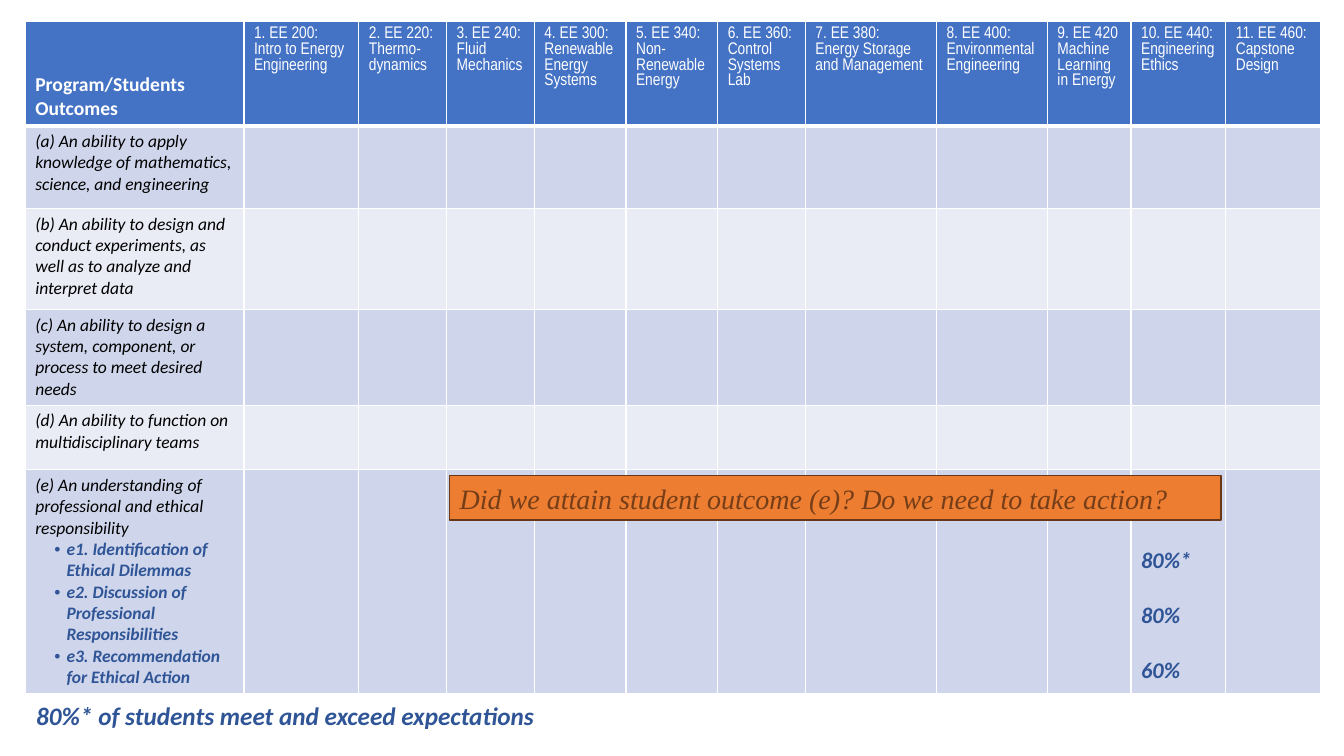
import pptx
import pptx.dml.color
import pptx.enum.shapes
import pptx.enum.text
import pptx.oxml
import pptx.oxml.ns
import pptx.util

Inches = pptx.util.Inches
Pt = pptx.util.Pt
ANCHOR = pptx.enum.text.MSO_ANCHOR

WHITE, BLACK, BLUE, NAVY = "FFFFFF", "000000", "4472C4", "2F5597"
BANDS = ("CFD5EA", "E9EBF5")
COL_WIDTHS = (2.17, 1.14, 0.87, 0.87, 0.91, 0.91, 0.87, 1.3, 1.1, 0.83, 0.94, 0.94)
ROW_HEIGHTS = (1.04, 0.82, 1, 0.95, 0.64, 2.22)
ETHICS_COL = 10
COURSES = (
    "1. EE 200: Intro to Energy Engineering",
    "2. EE 220: Thermo-dynamics",
    "3. EE 240: Fluid Mechanics",
    "4. EE 300: Renewable Energy Systems",
    "5. EE 340: Non-Renewable Energy",
    "6. EE 360: Control Systems Lab",
    "7. EE 380: Energy Storage and Management",
    "8. EE 400: Environmental Engineering",
    "9. EE 420 Machine Learning in Energy",
    "10. EE 440: Engineering Ethics",
    "11. EE 460: Capstone Design",
)
OUTCOMES = (
    "(a) An ability to apply knowledge of mathematics, science, and engineering",
    "(b) An ability to design and conduct experiments, as well as to analyze and interpret data",
    "(c) An ability to design a system, component, or process to meet desired needs",
    "(d) An ability to function on multidisciplinary teams",
    "(e) An understanding of professional and ethical responsibility",
)
INDICATORS = (
    "e1. Identification of Ethical Dilemmas",
    "e2. Discussion of Professional Responsibilities",
    "e3. Recommendation for Ethical Action",
)
RESULTS = ("80%*", "80%", "60%")


def rgb(color):
    """Turn a hex string into a colour."""
    return pptx.dml.color.RGBColor.from_string(color)


def add_run(p, text, size, color, font="Calibri", bold=False, italic=False):
    """Add one formatted run to a paragraph."""
    r = p.add_run()
    r.text = text
    r.font.size = Pt(size)
    r.font.name = font
    r.font.bold = bold
    r.font.italic = italic
    r.font.color.rgb = rgb(color)


def xml(text):
    """Parse a DrawingML fragment."""
    return pptx.oxml.parse_xml(text.replace(">", f' {pptx.oxml.ns.nsdecls("a")}>', 1))


def style_cell(cell, fill, bottom_width=1):
    """Fill a cell and give it white borders."""
    cell.fill.solid()
    cell.fill.fore_color.rgb = rgb(fill)
    tc_pr = cell._tc.get_or_add_tcPr()
    for i, side in enumerate("LRTB"):
        width = Pt(bottom_width if side == "B" else 1)
        tc_pr.insert(i, xml(
            f'<a:ln{side} w="{width}"><a:solidFill><a:srgbClr val="{WHITE}"/>'
            f'</a:solidFill></a:ln{side}>'))


def add_bullet(p):
    """Give a paragraph a hanging bullet."""
    p_pr = p._p.get_or_add_pPr()
    p_pr.set("marL", str(Inches(0.31)))
    p_pr.set("indent", str(Inches(-0.12)))
    p_pr.append(xml('<a:buFont typeface="Arial"></a:buFont>'))
    p_pr.append(xml('<a:buChar char="•"></a:buChar>'))


def fill_header(table):
    """Write the heading and the course names in the first row."""
    heading = table.cell(0, 0)
    heading.vertical_anchor = ANCHOR.BOTTOM
    add_run(heading.text_frame.paragraphs[0], "Program/Students Outcomes", 14, WHITE, bold=True)
    for col, course in enumerate(COURSES, 1):
        p = table.cell(0, col).text_frame.paragraphs[0]
        add_run(p, course, 12, WHITE, "Arial Narrow")


def fill_outcomes(table):
    """Write the outcomes, the indicators of the last one and their results."""
    for row, outcome in enumerate(OUTCOMES, 1):
        tf = table.cell(row, 0).text_frame
        add_run(tf.paragraphs[0], outcome, 12.5, BLACK, italic=True)
    for indicator in INDICATORS:
        p = tf.add_paragraph()
        add_bullet(p)
        add_run(p, indicator, 12.5, NAVY, bold=True, italic=True)

    cell = table.cell(len(OUTCOMES), ETHICS_COL)
    cell.vertical_anchor = ANCHOR.BOTTOM
    cell.margin_bottom = Inches(0.09)
    tf = cell.text_frame
    for i, result in enumerate(RESULTS):
        p = tf.add_paragraph() if i else tf.paragraphs[0]
        if i:
            p.space_before = Pt(19.5)
        add_run(p, result, 16, NAVY, bold=True, italic=True)


def add_matrix(s, left, top):
    """Add the table of outcomes against courses."""
    frame = s.shapes.add_table(
        len(ROW_HEIGHTS), len(COL_WIDTHS), Inches(left), Inches(top),
        Inches(sum(COL_WIDTHS)), Inches(sum(ROW_HEIGHTS)))
    table = frame.table
    for column, width in zip(table.columns, COL_WIDTHS):
        column.width = Inches(width)
    for i, (row, height) in enumerate(zip(table.rows, ROW_HEIGHTS)):
        row.height = Inches(height)
        for cell in row.cells:
            if i:
                style_cell(cell, BANDS[(i - 1) % 2])
            else:
                style_cell(cell, BLUE, 3)
    fill_header(table)
    fill_outcomes(table)


def add_footnote(s, left, top, width, height):
    """Add the note on the target below the table."""
    sp = s.shapes.add_textbox(Inches(left), Inches(top), Inches(width), Inches(height))
    tf = sp.text_frame
    tf.word_wrap = True
    add_run(tf.paragraphs[0], "80%* of students meet and exceed expectations",
            18, NAVY, bold=True, italic=True)


def add_question(s, left, top, width, height):
    """Add the orange question banner over the table."""
    sp = s.shapes.add_shape(
        pptx.enum.shapes.MSO_SHAPE.RECTANGLE,
        Inches(left), Inches(top), Inches(width), Inches(height))
    sp.shadow.inherit = False
    sp.fill.solid()
    sp.fill.fore_color.rgb = rgb("ED7D31")
    sp.line.color.rgb = rgb("683715")
    sp.line.width = Pt(1)
    tf = sp.text_frame
    tf.word_wrap = True
    tf.vertical_anchor = ANCHOR.MIDDLE
    p = tf.paragraphs[0]
    p.alignment = pptx.enum.text.PP_ALIGN.LEFT
    add_run(p, "Did we attain student outcome (e)? Do we need to take action?",
            20, "763E18", "Times New Roman", italic=True)


def main():
    """Build and save the slide."""
    prs = pptx.Presentation()
    prs.slide_width, prs.slide_height = Inches(13.33), Inches(7.5)
    s = prs.slides.add_slide(prs.slide_layouts[6])
    add_matrix(s, 0.25, 0.21)
    add_footnote(s, 0.26, 6.9, 5.28, 0.4)
    add_question(s, 4.46, 4.72, 7.65, 0.44)
    prs.save("out.pptx")


if __name__ == "__main__":
    main()
